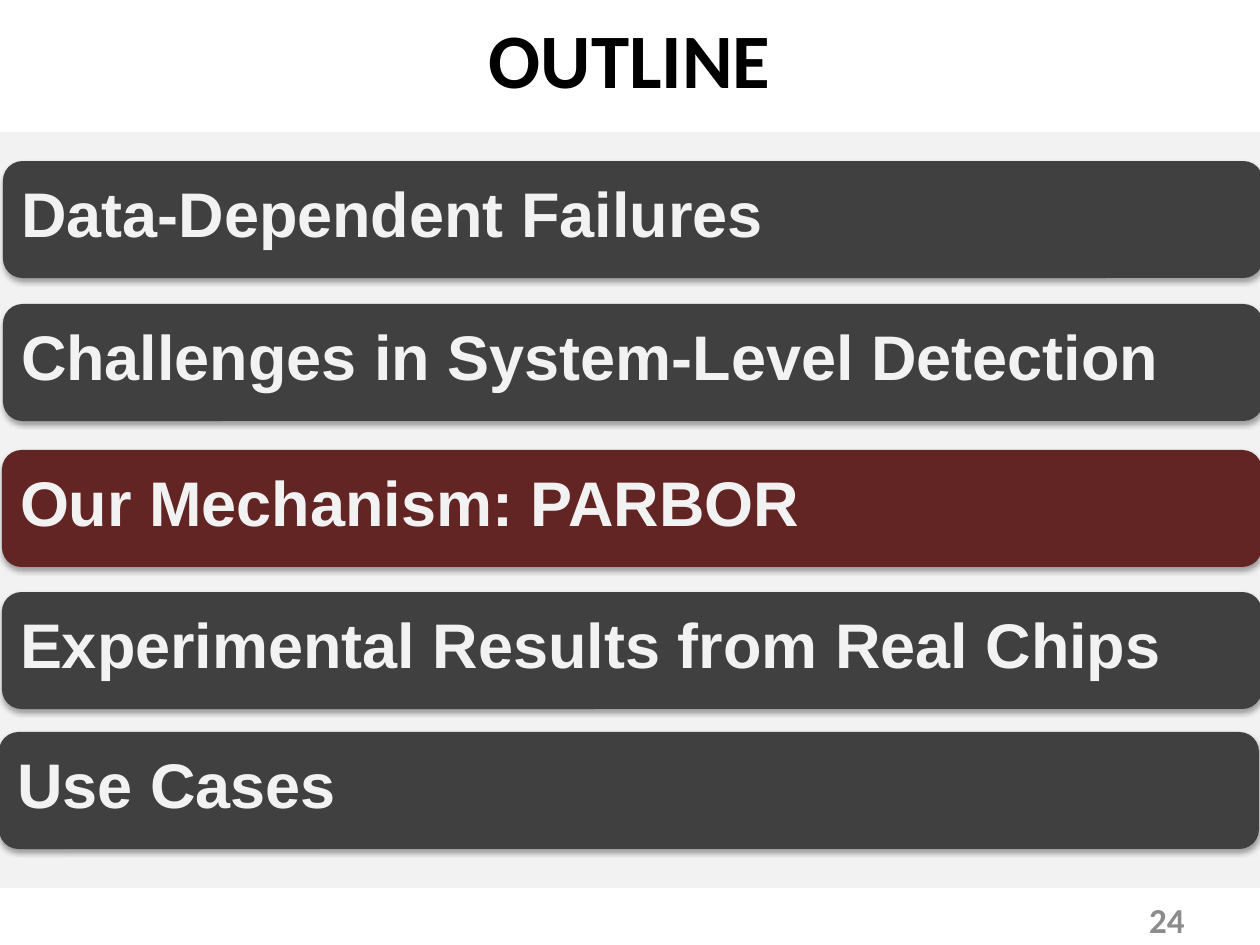
from dataclasses import dataclass

from lxml import etree
from pptx import Presentation
from pptx import util as u
from pptx.dml.color import RGBColor
from pptx.enum import shapes, text
from pptx.oxml.ns import qn


@dataclass(frozen=True)
class Theme:
    panel: str = "F2F2F2"
    bar: str = "404040"
    current: str = "632523"
    bar_text: str = "F2F2F2"
    title: str = "000000"
    number: str = "8C8C8C"
    shadow: str = "000000"
    heading_font: str = "Calibri"
    bar_font: str = "Arial"
    title_pt: int = 44
    bar_pt: int = 36
    number_pt: int = 20


T = Theme()
PX = 914400 / 126


def px(*values):
    return [u.Emu(round(v * PX)) for v in values]


def write(sp, words, font, size, color, align):
    """Put one bold, vertically centred line of text in a shape."""
    tf = sp.text_frame
    tf.text = words
    tf.word_wrap = True
    tf.vertical_anchor = text.MSO_ANCHOR.MIDDLE
    p = tf.paragraphs[0]
    p.alignment = align
    f = p.runs[0].font
    f.name, f.size, f.bold = font, u.Pt(size), True
    f.color.rgb = RGBColor.from_string(color)
    return p


prs = Presentation()
prs.slide_width, prs.slide_height = px(1260, 945)
s = prs.slides.add_slide(prs.slide_layouts[5])

# Title
title = s.shapes.title
title.left, title.top, title.width, title.height = px(0, -21, 1260, 158)
write(title, "OUTLINE", T.heading_font, T.title_pt, T.title, text.PP_ALIGN.CENTER)

# Background panel, behind the title
panel = s.shapes.add_shape(shapes.MSO_SHAPE.RECTANGLE, *px(0, 132, 1260, 756))
panel.shadow.inherit = False
panel.fill.solid()
panel.fill.fore_color.rgb = RGBColor.from_string(T.panel)
panel.line.fill.background()
title._element.addprevious(panel._element)

# Slide number
number = s.shapes.add_textbox(*px(903, 895, 294, 50))
write(number, "24", T.heading_font, T.number_pt, T.number, text.PP_ALIGN.RIGHT)

# Outline bars: left, top, fill, words
sections = [
    (3, 161, T.bar, "Data-Dependent Failures"),
    (3, 304, T.bar, "Challenges in System-Level Detection"),
    (2, 450, T.current, "Our Mechanism: PARBOR"),
    (2, 592, T.bar, "Experimental Results from Real Chips"),
    (-1, 732, T.bar, "Use Cases"),
]
for left, top, fill, words in sections:
    sp = s.shapes.add_shape(shapes.MSO_SHAPE.ROUNDED_RECTANGLE, *px(left, top, 1260, 117))
    sp.fill.solid()
    sp.fill.fore_color.rgb = RGBColor.from_string(fill)
    sp.line.fill.background()
    sp.shadow.inherit = False
    effects = sp._element.spPr.find(qn("a:effectLst"))
    shadow = etree.SubElement(effects, qn("a:outerShdw"), blurRad="40000",
                              dist="23000", dir="5400000", rotWithShape="0")
    color = etree.SubElement(shadow, qn("a:srgbClr"), val=T.shadow)
    etree.SubElement(color, qn("a:alpha"), val="35000")
    p = write(sp, words, T.bar_font, T.bar_pt, T.bar_text, text.PP_ALIGN.LEFT)
    p.line_spacing = 0.8

prs.save("out.pptx")
